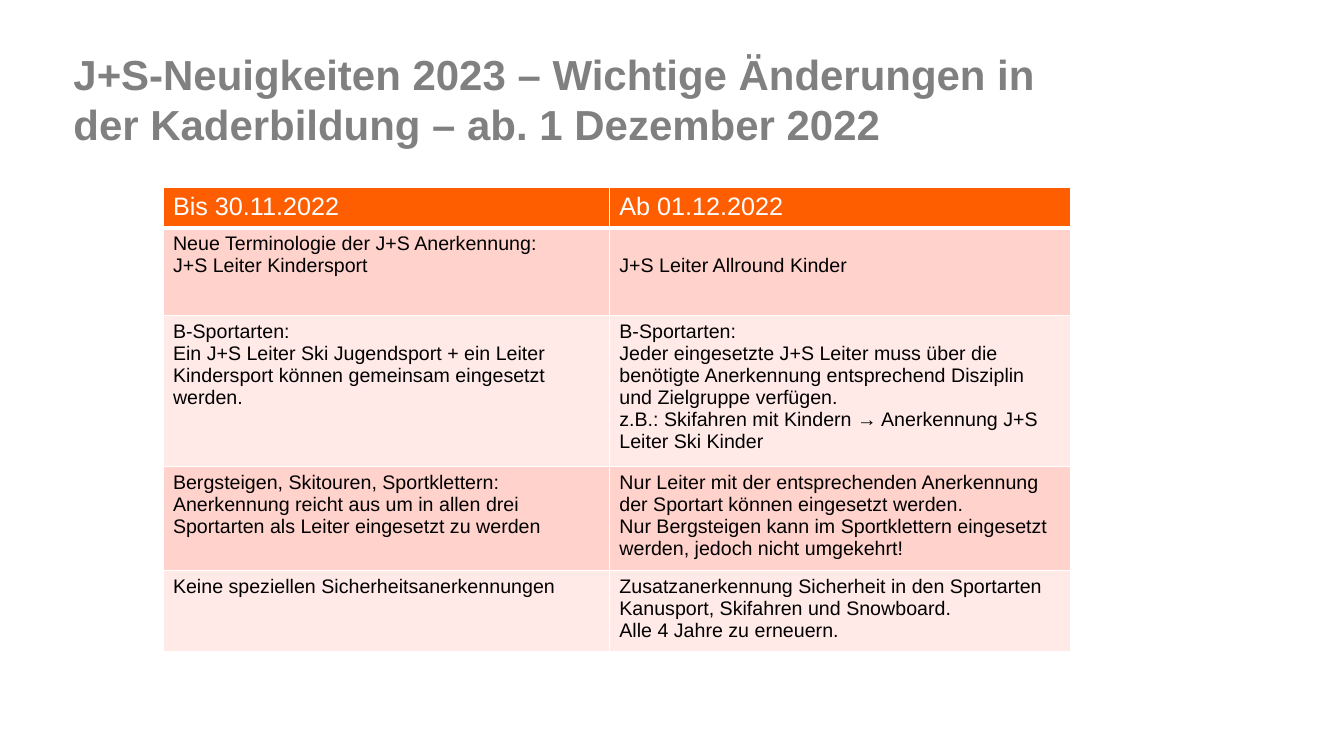
"""Build a slide that compares the J+S rules before and after 1 December 2022."""
from dataclasses import dataclass

import pptx
import pptx.dml.color
import pptx.enum.text
import pptx.oxml
import pptx.oxml.ns
import pptx.util
from pptx.util import Cm


@dataclass(frozen=True)
class Theme:
    font: str = "Arial"
    title: str = "808080"
    head: str = "FF5E00"
    bands: tuple = ("FFD2CC", "FFEAE7")
    light: str = "FFFFFF"
    dark: str = "000000"
    big: int = 30
    mid: int = 18
    small: int = 14
    thin: int = 1
    thick: int = 3


LOOK = Theme()
TITLE = "J+S-Neuigkeiten 2023 – Wichtige Änderungen in der Kaderbildung – ab. 1 Dezember 2022"
WIDTHS = (11.25, 11.63)
HEIGHTS = (1.02, 2.21, 3.81, 2.62, 2.03)
INSET = 0.13
LOWER = 0.68
ROWS = [
    (["Bis 30.11.2022"], ["Ab 01.12.2022"]),
    (["Neue Terminologie der J+S Anerkennung:", "J+S Leiter Kindersport"],
     ["J+S Leiter Allround Kinder"]),
    (["B-Sportarten:",
      "Ein J+S Leiter Ski Jugendsport + ein Leiter Kindersport können gemeinsam "
      "eingesetzt werden."],
     ["B-Sportarten:",
      "Jeder eingesetzte J+S Leiter muss über die benötigte Anerkennung entsprechend "
      "Disziplin und Zielgruppe verfügen.",
      "z.B.: Skifahren mit Kindern → Anerkennung J+S Leiter Ski Kinder"]),
    (["Bergsteigen, Skitouren, Sportklettern: Anerkennung reicht aus um in allen drei "
      "Sportarten als Leiter eingesetzt zu werden"],
     ["Nur Leiter mit der entsprechenden Anerkennung der Sportart können eingesetzt werden.",
      "Nur Bergsteigen kann im Sportklettern eingesetzt werden, jedoch nicht umgekehrt!"]),
    (["Keine speziellen Sicherheitsanerkennungen"],
     ["Zusatzanerkennung Sicherheit in den Sportarten Kanusport, Skifahren und Snowboard.",
      "Alle 4 Jahre zu erneuern."]),
]


def rgb(code):
    return pptx.dml.color.RGBColor.from_string(code)


def write(frame, lines, size, color, bold=False):
    for i, line in enumerate(lines):
        para = frame.add_paragraph() if i else frame.paragraphs[0]
        para.alignment = pptx.enum.text.PP_ALIGN.LEFT
        run = para.add_run()
        run.text = line
        font = run.font
        font.name, font.size, font.bold = LOOK.font, pptx.util.Pt(size), bold
        font.color.rgb = rgb(color)


def add_title(slide):
    shape = slide.shapes.title
    shape.left, shape.top, shape.width, shape.height = Cm(1.85), Cm(1.22), Cm(25.7), Cm(2.5)
    frame = shape.text_frame
    frame.margin_left = frame.margin_right = frame.margin_top = frame.margin_bottom = 0
    frame.word_wrap = True
    frame.auto_size = pptx.enum.text.MSO_AUTO_SIZE.NONE
    frame.vertical_anchor = pptx.enum.text.MSO_ANCHOR.TOP
    write(frame, [TITLE], LOOK.big, LOOK.title, True)


def border(cell, side, width):
    space = pptx.oxml.ns.nsdecls("a")
    line = pptx.oxml.parse_xml(
        f'<a:{side} {space} w="{pptx.util.Pt(width)}"><a:solidFill>'
        f'<a:srgbClr val="{LOOK.light}"/></a:solidFill></a:{side}>')
    cell._tc.get_or_add_tcPr().append(line)


def fill_cell(cell, lines, row, top):
    edges = {"lnL": LOOK.thin, "lnR": LOOK.thin,
             "lnT": LOOK.thick if row == 1 else LOOK.thin,
             "lnB": LOOK.thick if row == 0 else LOOK.thin}
    for side, width in edges.items():
        border(cell, side, width)
    cell.fill.solid()
    cell.fill.fore_color.rgb = rgb(LOOK.bands[(row - 1) % 2] if row else LOOK.head)
    cell.margin_left = cell.margin_right = Cm(0.25)
    cell.margin_top, cell.margin_bottom = Cm(top), Cm(INSET)
    cell.vertical_anchor = pptx.enum.text.MSO_ANCHOR.TOP
    size, color = (LOOK.small, LOOK.dark) if row else (LOOK.mid, LOOK.light)
    write(cell.text_frame, lines, size, color)


def add_rules(slide):
    table = slide.shapes.add_table(
        len(ROWS), len(WIDTHS), Cm(4.11), Cm(4.72),
        Cm(sum(WIDTHS)), Cm(sum(HEIGHTS))).table
    for col, width in zip(table.columns, WIDTHS):
        col.width = Cm(width)
    for row, height in zip(table.rows, HEIGHTS):
        row.height = Cm(height)
    for r, texts in enumerate(ROWS):
        for c, lines in enumerate(texts):
            fill_cell(table.cell(r, c), lines, r, LOWER if (r, c) == (1, 1) else INSET)


def main():
    deck = pptx.Presentation()
    deck.slide_width, deck.slide_height = Cm(33.87), Cm(19.05)
    slide = deck.slides.add_slide(deck.slide_layouts.get_by_name("Title Only"))
    add_title(slide)
    add_rules(slide)
    deck.save("out.pptx")


if __name__ == "__main__":
    main()
